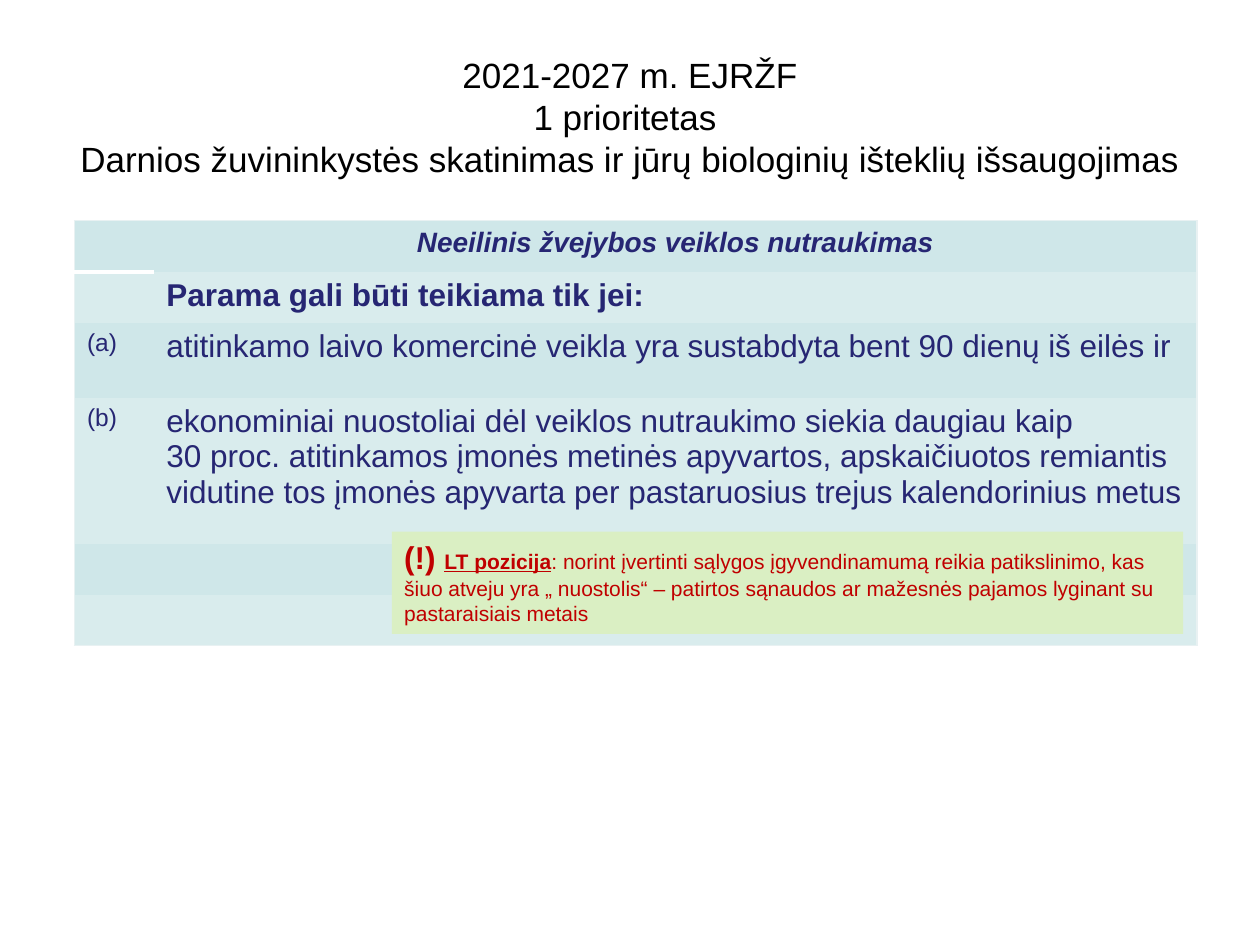
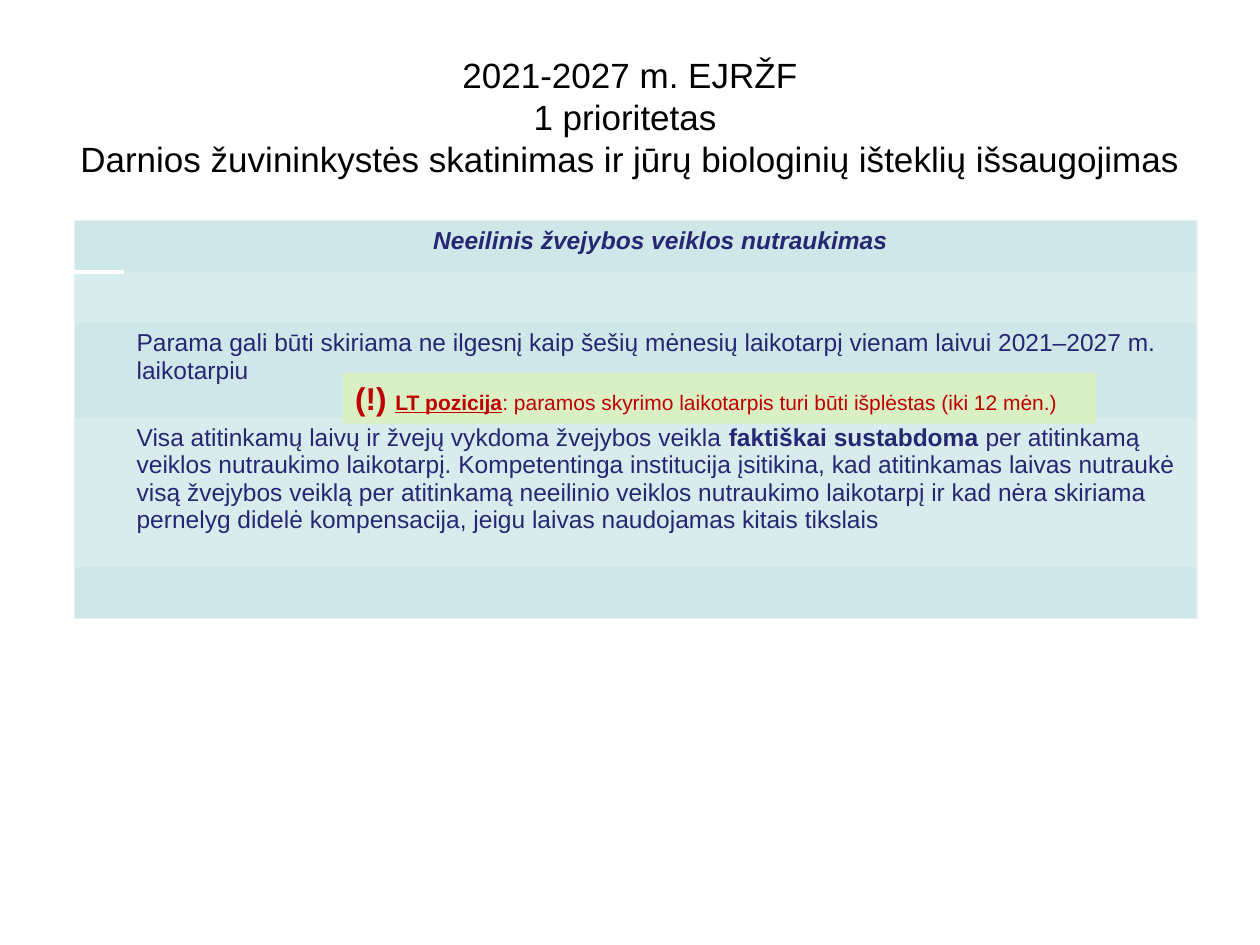
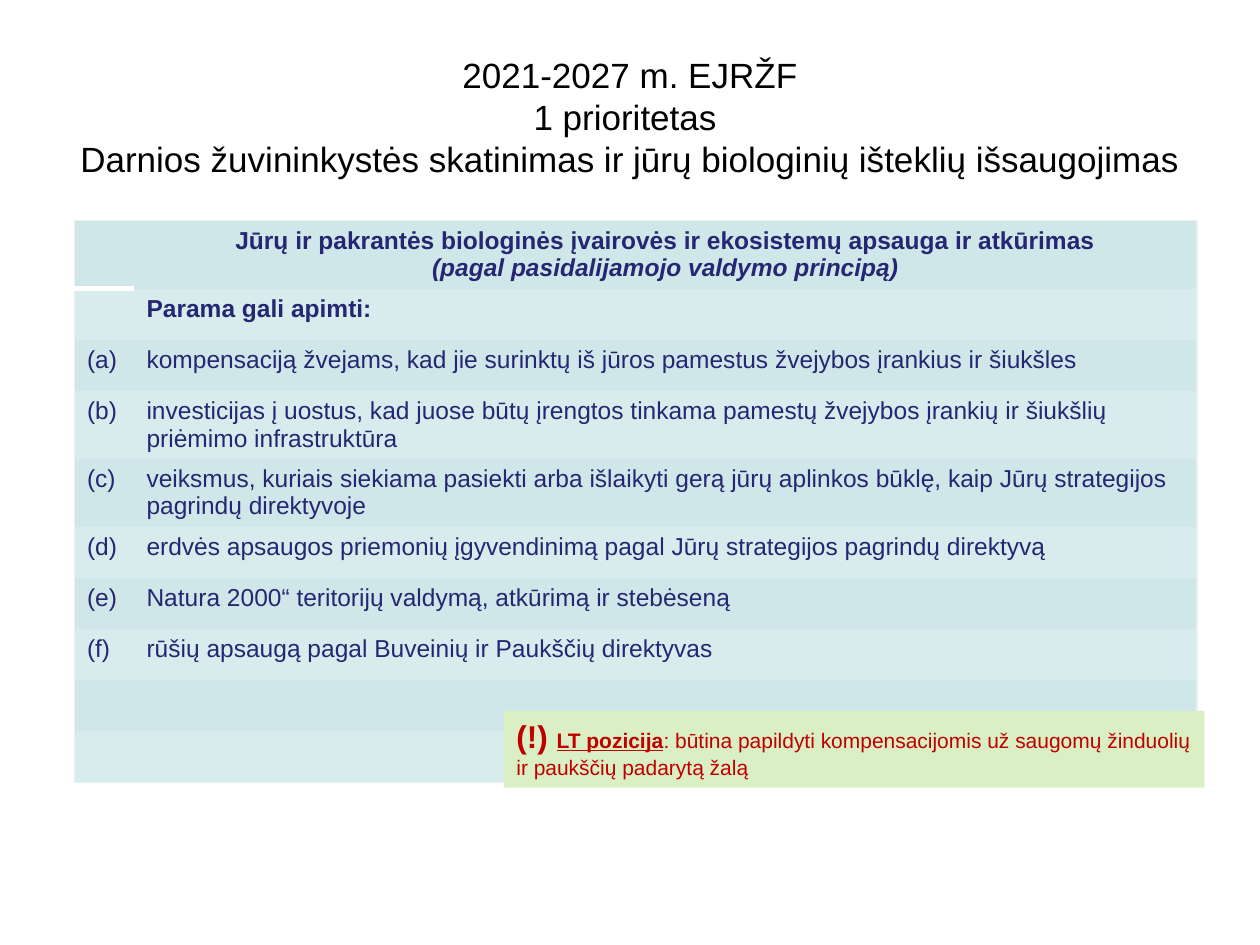
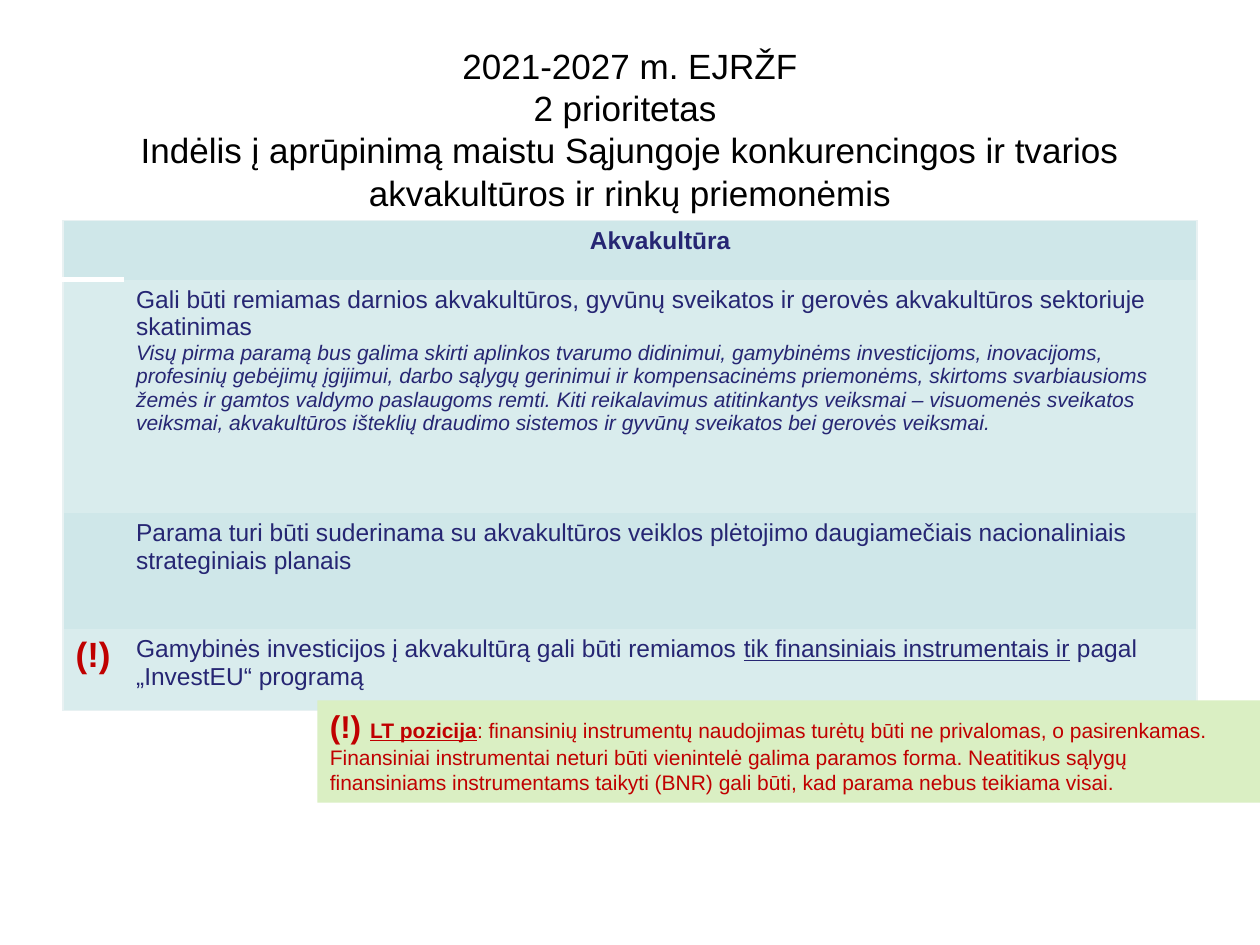
from dataclasses import dataclass

from lxml.etree import SubElement
from pptx import Presentation
from pptx.dml.color import RGBColor
from pptx.enum.shapes import MSO_SHAPE
from pptx.enum.text import MSO_ANCHOR, MSO_AUTO_SIZE, PP_ALIGN
from pptx.oxml.ns import qn
from pptx.util import Cm, Pt

# Shared look
FONT = "Arial"
BLACK = RGBColor(0x00, 0x00, 0x00)
WHITE = RGBColor(0xFF, 0xFF, 0xFF)
NAVY = RGBColor(0x26, 0x26, 0x73)
RED = RGBColor(0xC0, 0x00, 0x00)
NOTE_GREEN = RGBColor(0xDA, 0xEF, 0xC3)
BAND_DARK = RGBColor(0xCF, 0xE7, 0xE9)
BAND_LIGHT = RGBColor(0xD9, 0xEC, 0xED)
FRAME = RGBColor(0xE8, 0xF1, 0xF2)

TITLE_ONLY = 5
NO_STYLE_NO_GRID = "{2D5ABB26-0587-4C30-8999-92F81FD0307C}"
TABLE_LEFT, TABLE_TOP, TABLE_RIGHT = 1.5, 4.45, 24.13
ROW = 1.03         # single-line row
DOUBLE_ROW = 1.37  # two-line row
NBSP = chr(160)    # keeps a number and its unit on one line

# Shared wording
FUND = "2021-2027 m. EJRŽF"
FISHERIES = (f"{FUND}\v1 prioritetas \vDarnios žuvininkystės skatinimas "
             "ir jūrų biologinių išteklių išsaugojimas")
AQUACULTURE = (f"{FUND}\v2 prioritetas \vIndėlis į aprūpinimą maistu Sąjungoje "
               "konkurencingos ir tvarios akvakultūros ir rinkų priemonėmis")
CESSATION = "Neeilinis žvejybos veiklos nutraukimas"


@dataclass
class Span:
    text: str
    size: float = 14
    bold: bool = False
    italic: bool = False
    underline: bool = False
    color: RGBColor = NAVY


def line(text, **style):
    """A paragraph made of one span."""
    return [Span(text, **style)]


def write(frame, paragraphs, align=PP_ALIGN.LEFT):
    """Fill a text frame with paragraphs, each a list of spans."""
    for index, spans in enumerate(paragraphs):
        paragraph = frame.paragraphs[0] if index == 0 else frame.add_paragraph()
        paragraph.alignment = align
        for span in spans:
            run = paragraph.add_run()
            run.text = span.text
            font = run.font
            font.name, font.size = FONT, Pt(span.size)
            font.bold, font.italic = span.bold, span.italic
            font.underline = span.underline
            font.color.rgb = span.color


def set_border(cell, side, color, width):
    border = SubElement(cell._tc.get_or_add_tcPr(), qn(f"a:ln{side}"), w=str(Pt(width)))
    fill = SubElement(border, qn("a:solidFill"))
    SubElement(fill, qn("a:srgbClr"), val=str(color))


def add_titled_slide(prs, heading, height=3.18):
    slide = prs.slides.add_slide(prs.slide_layouts[TITLE_ONLY])
    title = slide.shapes.title
    title.left, title.top = Cm(1.27), Cm(0.76)
    title.width, title.height = Cm(22.86), Cm(height)
    frame = title.text_frame
    frame.text = heading
    frame.auto_size = MSO_AUTO_SIZE.NONE
    frame.vertical_anchor = MSO_ANCHOR.MIDDLE
    paragraph = frame.paragraphs[0]
    paragraph.alignment = PP_ALIGN.CENTER
    for run in paragraph.runs:
        run.font.name, run.font.size = FONT, Pt(20)
        run.font.color.rgb = BLACK
    return slide


def add_measures(slide, rows, label_width, left=TABLE_LEFT):
    """Banded table; a row is (height, label paragraphs, text paragraphs)."""
    width = TABLE_RIGHT - left
    total = sum(height for height, _, _ in rows)
    table = slide.shapes.add_table(len(rows), 2, Cm(left), Cm(TABLE_TOP),
                                   Cm(width), Cm(total)).table
    table._tbl.tblPr.find(qn("a:tableStyleId")).text = NO_STYLE_NO_GRID
    table.first_row = table.horz_banding = False
    table.columns[0].width = Cm(label_width)
    table.columns[1].width = Cm(width - label_width)

    last = len(rows) - 1
    for r, (height, *contents) in enumerate(rows):
        table.rows[r].height = Cm(height)
        for c, paragraphs in enumerate(contents):
            cell = table.cell(r, c)
            set_border(cell, "R" if c else "L", FRAME, 0.75)
            if r == 0:
                set_border(cell, "T", FRAME, 0.75)
                if c == 0:
                    set_border(cell, "B", WHITE, 3)
            if r == last:
                set_border(cell, "B", FRAME, 0.75)
            cell.fill.solid()
            cell.fill.fore_color.rgb = BAND_LIGHT if r % 2 else BAND_DARK
            align = PP_ALIGN.CENTER if r == 0 else PP_ALIGN.LEFT
            write(cell.text_frame, paragraphs, align)


def add_position_note(slide, left, top, width, height, text):
    """Green box with the national position."""
    note = slide.shapes.add_shape(MSO_SHAPE.RECTANGLE, Cm(left), Cm(top),
                                  Cm(width), Cm(height))
    note.shadow.inherit = False
    note.fill.solid()
    note.fill.fore_color.rgb = NOTE_GREEN
    note.line.fill.background()
    frame = note.text_frame
    frame.word_wrap = True
    frame.vertical_anchor = MSO_ANCHOR.TOP
    write(frame, [[Span("(!) ", 18, bold=True, color=RED),
                   Span("LT pozicija", 12, bold=True, underline=True, color=RED),
                   Span(f": {text}", 12, color=RED)]])


def build_cessation_conditions(prs):
    slide = add_titled_slide(prs, FISHERIES)
    add_measures(slide, [
        (ROW, [], [line(CESSATION, size=16, bold=True, italic=True)]),
        (ROW, [], [line("Parama gali būti teikiama tik jei:", size=18, bold=True)]),
        (1.51, [line("(a)")], [line(
            "atitinkamo laivo komercinė veikla yra sustabdyta bent 90 dienų iš eilės ir",
            size=18)]),
        (2.94, [line("(b)")], [line(
            "ekonominiai nuostoliai dėl veiklos nutraukimo siekia daugiau kaip "
            f"30{NBSP}proc. atitinkamos įmonės metinės apyvartos, apskaičiuotos "
            "remiantis vidutine tos įmonės apyvarta per pastaruosius trejus "
            "kalendorinius metus", size=18)]),
        (ROW, [], []),
        (ROW, [], []),
    ], label_width=1.6)
    add_position_note(
        slide, 7.9, 10.72, 15.95, 2.06,
        "norint įvertinti sąlygos įgyvendinamumą reikia patikslinimo, kas šiuo atveju "
        "yra „ nuostolis“ – patirtos sąnaudos ar mažesnės pajamos lyginant su "
        "pastaraisiais metais")


def build_cessation_duration(prs):
    slide = add_titled_slide(prs, FISHERIES)
    add_measures(slide, [
        (ROW, [], [line(CESSATION, bold=True, italic=True)]),
        (ROW, [], []),
        (1.91, [], [line(
            "Parama gali būti skiriama ne ilgesnį kaip šešių mėnesių laikotarpį "
            f"vienam laivui 2021–2027{NBSP}m. laikotarpiu")]),
        (3.02, [], [[
            Span("Visa atitinkamų laivų ir žvejų vykdoma žvejybos veikla "),
            Span("faktiškai sustabdoma ", bold=True),
            Span("per atitinkamą veiklos nutraukimo laikotarpį. Kompetentinga "
                 "institucija įsitikina, kad atitinkamas laivas nutraukė visą žvejybos "
                 "veiklą per atitinkamą neeilinio veiklos nutraukimo laikotarpį ir kad "
                 "nėra skiriama pernelyg didelė kompensacija, jeigu laivas naudojamas "
                 "kitais tikslais")]]),
        (ROW, [], []),
    ], label_width=1.0)
    add_position_note(
        slide, 6.91, 7.52, 15.19, 1.02,
        "paramos skyrimo laikotarpis turi būti išplėstas (iki 12 mėn.)")


def build_biodiversity(prs):
    slide = add_titled_slide(prs, FISHERIES)
    supported = [
        (ROW, "kompensaciją žvejams, kad jie surinktų iš jūros pamestus žvejybos "
              "įrankius ir šiukšles"),
        (DOUBLE_ROW, "investicijas į uostus, kad juose būtų įrengtos tinkama pamestų "
                     "žvejybos įrankių ir šiukšlių priėmimo infrastruktūra"),
        (DOUBLE_ROW, "veiksmus, kuriais siekiama pasiekti arba išlaikyti gerą jūrų "
                     "aplinkos būklę, kaip Jūrų strategijos pagrindų direktyvoje"),
        (ROW, "erdvės apsaugos priemonių įgyvendinimą pagal Jūrų strategijos pagrindų "
              "direktyvą"),
        (ROW, "Natura 2000“ teritorijų valdymą, atkūrimą ir stebėseną"),
        (ROW, "rūšių apsaugą pagal Buveinių ir Paukščių direktyvas"),
    ]
    add_measures(slide, [
        (DOUBLE_ROW, [], [
            line("Jūrų ir pakrantės biologinės įvairovės ir ekosistemų apsauga ir "
                 "atkūrimas", bold=True),
            line("(pagal pasidalijamojo valdymo principą)", bold=True, italic=True)]),
        (ROW, [], [line("Parama gali apimti:", bold=True)]),
        *((height, [line(f"({letter})")], [line(text)])
          for letter, (height, text) in zip("abcdef", supported)),
        (ROW, [], []),
        (ROW, [], []),
    ], label_width=1.2)
    add_position_note(
        slide, 10.16, 14.33, 14.12, 1.55,
        "būtina papildyti kompensacijomis už saugomų žinduolių ir paukščių padarytą žalą")


def build_aquaculture(prs):
    # The four-line title ends just above the table
    slide = add_titled_slide(prs, AQUACULTURE, height=3.68)
    add_measures(slide, [
        (1.19, [], [line("Akvakultūra", bold=True)]),
        (4.7, [], [
            line("Gali būti remiamas darnios akvakultūros, gyvūnų sveikatos ir gerovės "
                 "akvakultūros sektoriuje skatinimas"),
            line("Visų pirma paramą bus galima skirti aplinkos tvarumo didinimui, "
                 "gamybinėms investicijoms, inovacijoms, profesinių gebėjimų įgijimui, "
                 "darbo sąlygų gerinimui ir kompensacinėms priemonėms, skirtoms "
                 "svarbiausioms žemės ir gamtos valdymo paslaugoms remti. Kiti "
                 "reikalavimus atitinkantys veiksmai – visuomenės sveikatos veiksmai, "
                 "akvakultūros išteklių draudimo sistemos ir gyvūnų sveikatos bei "
                 "gerovės veiksmai.", size=12, italic=True)]),
        (2.34, [], [line(
            "Parama turi būti suderinama su akvakultūros veiklos plėtojimo "
            "daugiamečiais nacionaliniais strateginiais planais")]),
        (1.65, [line("(!)", size=20, bold=True, color=RED)], [[
            Span("Gamybinės investicijos į akvakultūrą gali būti remiamos "),
            Span("tik finansiniais instrumentais ir", underline=True),
            Span(" pagal „InvestEU“ programą")]]),
    ], label_width=1.22, left=1.27)
    add_position_note(
        slide, 6.4, 14.12, 19, 2.06,
        "finansinių instrumentų naudojimas turėtų būti ne privalomas, o pasirenkamas. "
        "Finansiniai instrumentai neturi būti vienintelė galima paramos forma. "
        "Neatitikus sąlygų finansiniams instrumentams taikyti (BNR) gali būti, kad "
        "parama nebus teikiama visai.")


def main():
    prs = Presentation()
    prs.slide_width, prs.slide_height = Cm(25.4), Cm(19.05)
    build_cessation_conditions(prs)
    build_cessation_duration(prs)
    build_biodiversity(prs)
    build_aquaculture(prs)
    prs.save("out.pptx")


if __name__ == "__main__":
    main()
